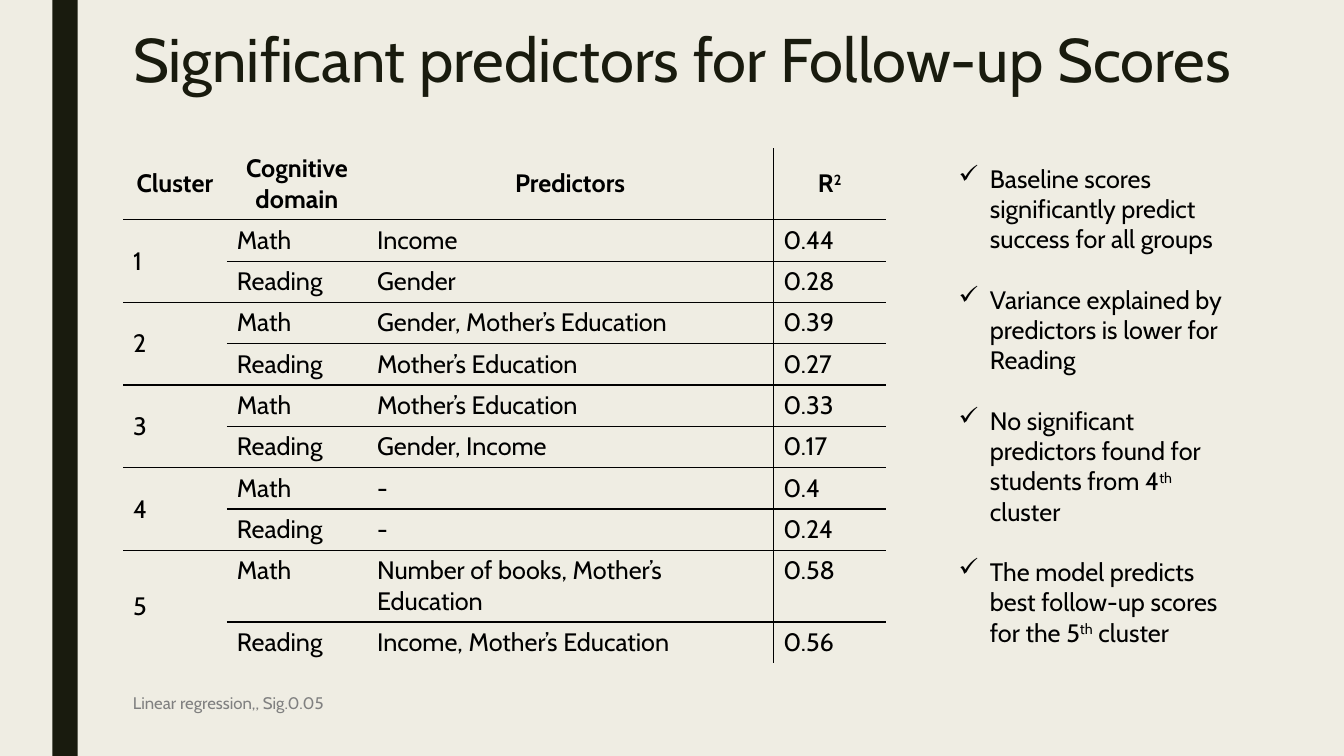
from dataclasses import dataclass
from typing import Any

from lxml import etree
from pptx import Presentation
from pptx import util as u
from pptx.dml.color import RGBColor
from pptx.enum import shapes, text
from pptx.oxml import ns


@dataclass(frozen=True)
class Theme:
    font: str = "Cabin"
    paper: RGBColor = RGBColor(0xEF, 0xED, 0xE3)
    dark: RGBColor = RGBColor(0x19, 0x1B, 0x0E)
    ink: RGBColor = RGBColor(0, 0, 0)
    muted: RGBColor = RGBColor(0x80, 0x80, 0x80)
    title_size: int = 44
    body_size: int = 18
    note_size: int = 12


@dataclass(frozen=True)
class Model:
    domain: str
    predictors: str
    r_squared: str
    height: float = 0.41


@dataclass(frozen=True)
class Cluster:
    label: str
    math: Model
    reading: Model


THEME = Theme()
PLAIN_TABLE = "{2D5ABB26-0587-4C30-8999-92F81FD0307C}"
COLUMN_WIDTHS = (1.03, 1.39, 4.03, 1.12)
HEADER_HEIGHT = 0.7
HEADINGS = (("Cluster",), ("Cognitive domain",), ("Predictors",), ("R", "2"))
CLUSTERS = (
    Cluster("1", Model("Math", "Income", "0.44"),
            Model("Reading", "Gender", "0.28")),
    Cluster("2", Model("Math", "Gender, Mother’s Education", "0.39"),
            Model("Reading", "Mother’s Education", "0.27")),
    Cluster("3", Model("Math", "Mother’s Education", "0.33"),
            Model("Reading", "Gender, Income", "0.17")),
    Cluster("4", Model("Math", "-", "0.4"),
            Model("Reading", "-", "0.24")),
    Cluster("5", Model("Math", "Number of books, Mother’s Education", "0.58", 0.7),
            Model("Reading", "Income, Mother’s Education", "0.56")),
)
FINDINGS = (
    ("Baseline scores significantly predict success for all groups",),
    ("Variance explained by predictors is lower for Reading",),
    ("No significant predictors found for students from 4", "th", " cluster"),
    ("The model predicts best follow-up scores for the 5", "th", " cluster"),
)


def apply(target: Any, formats: dict[str, Any]) -> None:
    for name, value in formats.items():
        setattr(target, name, value)


def box(left: float, top: float, width: float, height: float) -> tuple[u.Length, ...]:
    return tuple(u.Inches(length) for length in (left, top, width, height))


def write(paragraph: Any, parts: tuple[str, ...], size: int = THEME.body_size,
          color: RGBColor = THEME.ink, bold: bool = False) -> None:
    for index, part in enumerate(parts):
        run = paragraph.add_run()
        run.text = part
        apply(run.font, {"name": THEME.font, "size": u.Pt(size), "bold": bold})
        run.font.color.rgb = color
        if index % 2:
            run._r.get_or_add_rPr().set("baseline", "30000")


def add_border(cell: Any, side: str) -> None:
    line = etree.SubElement(cell._tc.get_or_add_tcPr(), ns.qn(f"a:ln{side}"),
                            w=str(u.Pt(1)))
    fill = etree.SubElement(line, ns.qn("a:solidFill"))
    etree.SubElement(fill, ns.qn("a:srgbClr"), val=str(THEME.ink))


def add_title(slide: Any) -> None:
    title = slide.shapes.title
    apply(title, dict(zip(("left", "top", "width", "height"),
                          box(1.22, 0.25, 11.18, 0.91))))
    apply(title.text_frame, {"vertical_anchor": text.MSO_ANCHOR.TOP,
                             "auto_size": text.MSO_AUTO_SIZE.NONE,
                             "word_wrap": True})
    heading = title.text_frame.paragraphs[0]
    apply(heading, {"alignment": text.PP_ALIGN.LEFT, "line_spacing": 0.89})
    write(heading, ("Significant predictors for Follow-up Scores",),
          THEME.title_size, THEME.dark)


def add_side_bar(slide: Any) -> None:
    bar = slide.shapes.add_shape(shapes.MSO_SHAPE.RECTANGLE, *box(0.52, 0, 0.25, 7.5))
    bar.shadow.inherit = False
    bar.fill.solid()
    bar.fill.fore_color.rgb = THEME.dark
    bar.line.fill.background()


def add_predictor_table(slide: Any) -> None:
    models = [model for cluster in CLUSTERS for model in (cluster.math, cluster.reading)]
    heights = [HEADER_HEIGHT] + [model.height for model in models]
    table = slide.shapes.add_table(
        len(heights), len(COLUMN_WIDTHS),
        *box(1.22, 1.47, sum(COLUMN_WIDTHS), sum(heights))).table
    apply(table, {"first_row": False, "horz_banding": False})
    table._tbl.tblPr.find(ns.qn("a:tableStyleId")).text = PLAIN_TABLE
    for column, width in zip(table.columns, COLUMN_WIDTHS):
        column.width = u.Inches(width)
    for row, height in zip(table.rows, heights):
        row.height = u.Inches(height)

    contents = [HEADINGS]
    for index, model in enumerate(models):
        label = () if index % 2 else (CLUSTERS[index // 2].label,)
        contents.append((label, (model.domain,), (model.predictors,), (model.r_squared,)))
    last = len(models)
    for row, entries in enumerate(contents):
        for column, parts in enumerate(entries):
            cell = table.cell(row, column)
            heading = row == 0
            if heading or column == 0:
                cell.vertical_anchor = text.MSO_ANCHOR.MIDDLE
            paragraph = cell.text_frame.paragraphs[0]
            paragraph.alignment = text.PP_ALIGN.CENTER if heading else text.PP_ALIGN.LEFT
            write(paragraph, parts, bold=heading)
            if column == 3:
                add_border(cell, "L")
            if column == 2:
                add_border(cell, "R")
            if row < last - 1 or (row < last and column > 0):
                add_border(cell, "B")
            cell.fill.background()
    for row in range(1, last, 2):
        table.cell(row, 0).merge(table.cell(row + 1, 0))


def add_text_area(slide: Any, *place: float) -> Any:
    frame = slide.shapes.add_textbox(*box(*place)).text_frame
    frame.word_wrap = True
    return frame


def add_findings(slide: Any) -> None:
    frame = add_text_area(slide, 9.41, 1.57, 2.99, 4.95)
    indent = u.Inches(0.31)
    for index, parts in enumerate(FINDINGS):
        finding = frame.add_paragraph() if index else frame.paragraphs[0]
        if index:
            finding.space_before = u.Pt(21.6)
        properties = finding._p.get_or_add_pPr()
        properties.set("marL", str(indent))
        properties.set("indent", str(-indent))
        etree.SubElement(properties, ns.qn("a:buChar"), char="✓")
        write(finding, parts)


def main() -> None:
    deck = Presentation()
    apply(deck, {"slide_width": u.Inches(13.33), "slide_height": u.Inches(7.5)})
    slide = deck.slides.add_slide(deck.slide_layouts.get_by_name("Title Only"))
    slide.background.fill.solid()
    slide.background.fill.fore_color.rgb = THEME.paper
    add_side_bar(slide)
    add_title(slide)
    add_predictor_table(slide)
    note = add_text_area(slide, 1.22, 6.82, 7.3, 0.3)
    write(note.paragraphs[0], ("Linear regression,, Sig.0.05",),
          THEME.note_size, THEME.muted)
    add_findings(slide)
    deck.save("out.pptx")


if __name__ == "__main__":
    main()
